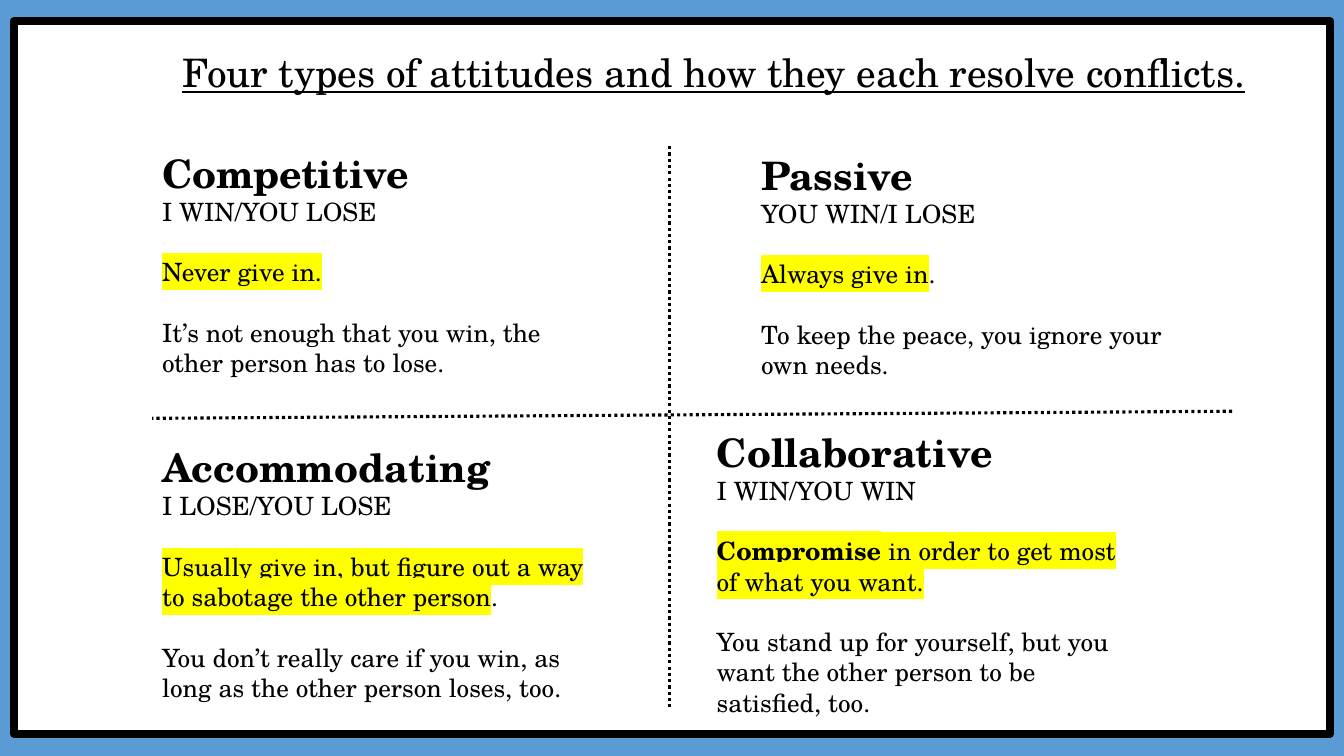
from lxml import etree
from pptx import Presentation
from pptx.dml.color import RGBColor
from pptx.enum.dml import MSO_LINE_DASH_STYLE as Dash
from pptx.enum.shapes import MSO_CONNECTOR as Connector, MSO_SHAPE as Shape
from pptx.enum.text import MSO_ANCHOR as Anchor, PP_ALIGN as Align
from pptx.oxml.ns import qn
from pptx.util import Inches, Pt

COLORS = {"background": "5A9BD5", "panel": "FFFFFF", "ink": "000000", "marker": "FFFF00"}
FONT = "TeX Gyre Schola"
HEADING_SIZE, BODY_SIZE = 28, 18
LINE_GAP = 21.65  # height of one body line, in points


def rgb(name):
    return RGBColor.from_string(COLORS[name])


class ConflictSlide:
    def __init__(self, presentation):
        self.slide = presentation.slides.add_slide(presentation.slide_layouts[5])
        fill = self.slide.background.fill
        fill.solid()
        fill.fore_color.rgb = rgb("background")

    def add_run(self, paragraph, text, size=BODY_SIZE, bold=False, underline=False, marked=False):
        run = paragraph.add_run()
        run.text = text
        font = run.font
        font.size, font.bold, font.underline = Pt(size), bold, underline
        font.color.rgb = rgb("ink")
        if marked:
            highlight = etree.SubElement(run._r.get_or_add_rPr(), qn("a:highlight"))
            etree.SubElement(highlight, qn("a:srgbClr"), val=COLORS["marker"])
        font.name = FONT

    def add_panel(self, left, top, width, height):
        panel = self.slide.shapes.add_shape(
            Shape.RECTANGLE, Inches(left), Inches(top), Inches(width), Inches(height))
        panel.shadow.inherit = False
        panel.fill.solid()
        panel.fill.fore_color.rgb = rgb("panel")
        panel.line.color.rgb = rgb("ink")
        panel.line.width = Pt(6)
        # The panel lies behind the title placeholder
        self.slide.shapes._spTree.insert(2, panel._element)

    def add_title(self, text, left, top, width, height):
        title = self.slide.shapes.title
        title.left, title.top = Inches(left), Inches(top)
        title.width, title.height = Inches(width), Inches(height)
        frame = title.text_frame
        frame.vertical_anchor = Anchor.TOP
        paragraph = frame.paragraphs[0]
        paragraph.alignment = Align.LEFT
        self.add_run(paragraph, text, HEADING_SIZE, underline=True)

    def add_attitude(self, left, top, height, anchor, name, outcome, rule, reason):
        """Add one quadrant; rule is a list of (text, run style), reason a list of paragraphs."""
        box = self.slide.shapes.add_textbox(
            Inches(left), Inches(top), Inches(4.4), Inches(height))
        frame = box.text_frame
        frame.word_wrap = True
        frame.vertical_anchor = anchor
        self.add_run(frame.paragraphs[0], name, HEADING_SIZE, bold=True)
        self.add_run(frame.add_paragraph(), outcome)
        paragraph = frame.add_paragraph()
        paragraph.space_before = Pt(LINE_GAP)
        for text, style in rule:
            self.add_run(paragraph, text, **style)
        for index, text in enumerate(reason):
            paragraph = frame.add_paragraph()
            paragraph.space_before = Pt(0 if index else LINE_GAP)
            self.add_run(paragraph, text)

    def add_divider(self, *ends):
        divider = self.slide.shapes.add_connector(Connector.STRAIGHT, *map(Inches, ends))
        divider.line.color.rgb = rgb("ink")
        divider.line.width = Pt(2.25)
        divider.line.dash_style = Dash.ROUND_DOT
        etree.SubElement(divider._element.spPr, qn("a:effectLst"))


def main():
    presentation = Presentation()
    presentation.slide_width, presentation.slide_height = Inches(13.33), Inches(7.5)
    page = ConflictSlide(presentation)
    page.add_panel(0.14, 0.21, 13.05, 7.07)
    page.add_title("Four types of attitudes and how they each resolve conflicts.",
                   1.71, 0.43, 11.49, 0.57)

    marked = {"marked": True}
    attitudes = [
        (1.51, 1.43, 2.45, Anchor.TOP, "Competitive", "I WIN/YOU LOSE",
         [("Never give in.", marked)],
         ["It’s not enough that you win, the other person has to lose."]),
        (7.45, 1.45, 2.45, Anchor.TOP, "Passive", "YOU WIN/I LOSE",
         [("Always give in", marked), (".", {})],
         ["To keep the peace, you ignore your", "own needs."]),
        (1.51, 4.46, 2.45, Anchor.MIDDLE, "Accommodating", "I LOSE/YOU LOSE",
         [("Usually give in, but figure out a way to sabotage the other person", marked),
          (".", {})],
         ["You don’t really care if you win, as long as the other person loses, too."]),
        (7.01, 4.39, 2.58, Anchor.MIDDLE, "Collaborative", "I WIN/YOU WIN",
         [("Compromise", {"marked": True, "bold": True, "underline": True}),
          (" in order to get most of what you want.", marked)],
         ["You stand up for yourself, but you want the other person to be satisfied, too."]),
    ]
    for attitude in attitudes:
        page.add_attitude(*attitude)

    page.add_divider(6.64, 1.45, 6.64, 7.03)
    page.add_divider(12.22, 4.08, 1.51, 4.15)
    presentation.save("out.pptx")


if __name__ == "__main__":
    main()
